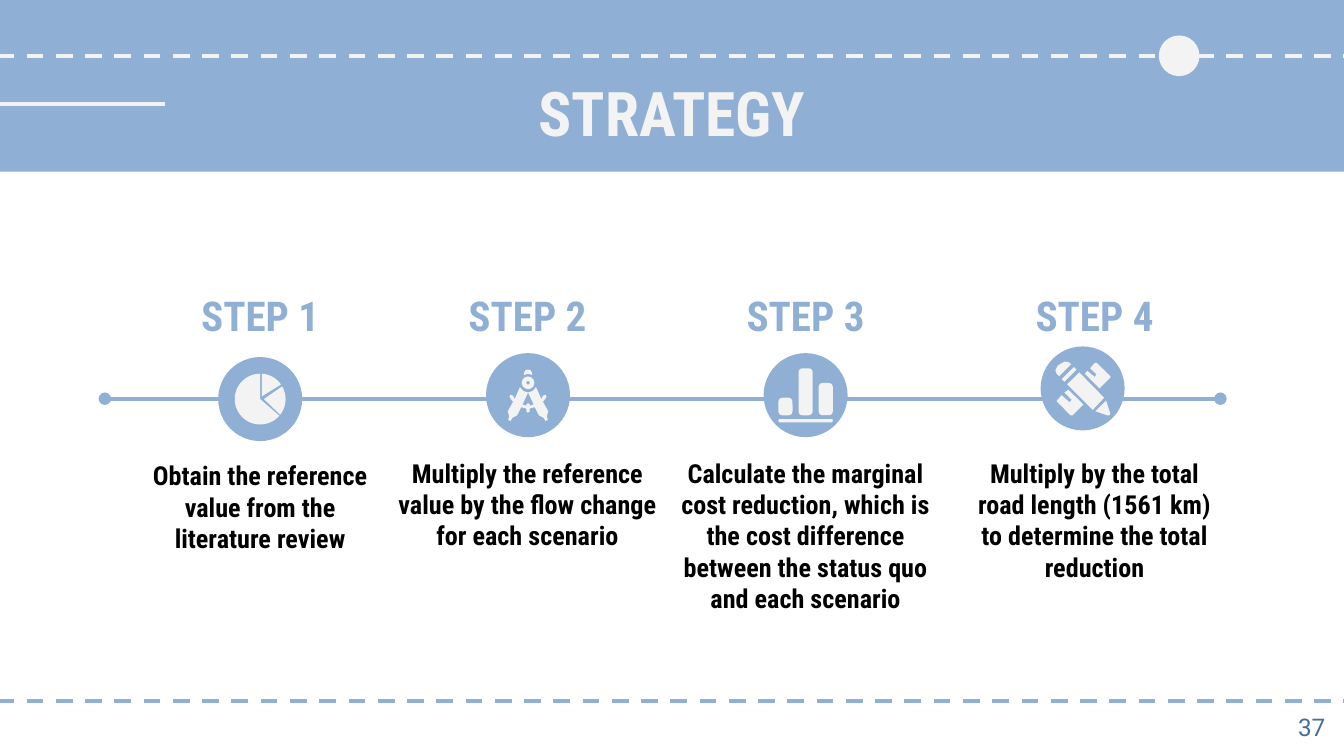
"""Build the strategy slide: a four-step timeline with icons."""
from dataclasses import dataclass
from math import cos, radians, sin
from typing import Callable

from lxml import etree
from pptx import Presentation
from pptx.dml.color import RGBColor
from pptx.enum.dml import MSO_LINE
from pptx.enum.shapes import MSO_CONNECTOR, MSO_SHAPE
from pptx.enum.text import MSO_ANCHOR, MSO_AUTO_SIZE, PP_ALIGN
from pptx.oxml.ns import qn
from pptx.util import Pt

RECT, OVAL = MSO_SHAPE.RECTANGLE, MSO_SHAPE.OVAL
ROUNDED, DONUT = MSO_SHAPE.ROUNDED_RECTANGLE, MSO_SHAPE.DONUT
STRAIGHT, DASH = MSO_CONNECTOR.STRAIGHT, MSO_LINE.DASH
CENTER, RIGHT = PP_ALIGN.CENTER, PP_ALIGN.RIGHT
TOP, MIDDLE = MSO_ANCHOR.TOP, MSO_ANCHOR.MIDDLE
NO_FIT = MSO_AUTO_SIZE.NONE

Points = list[tuple[float, float]]


@dataclass(frozen=True)
class Style:
    size: float
    color: RGBColor
    bold: bool = True
    font: str = "Roboto Condensed"


@dataclass(frozen=True)
class Theme:
    blue: RGBColor = RGBColor(0x8F, 0xB0, 0xD4)
    light: RGBColor = RGBColor(0xF3, 0xF3, 0xF3)
    title: Style = Style(33, light)
    step: Style = Style(22, blue)
    body: Style = Style(14, RGBColor(0, 0, 0))
    number: Style = Style(13, RGBColor(0x43, 0x6F, 0x9E), False, "Roboto")
    line: float = 2.25
    inset: float = 7.2


THEME = Theme()


@dataclass(frozen=True)
class Step:
    cx: float
    icon_x: float
    icon_y: float
    body_top: float
    body_width: float
    paragraphs: tuple[str, ...]
    icon: Callable


def paint(sp, color: RGBColor) -> None:
    """Give a shape a flat fill without line or shadow."""
    sp.shadow.inherit = False
    sp.fill.solid()
    sp.fill.fore_color.rgb = color
    sp.line.fill.background()


def add_preset(s, kind, x: float, y: float, w: float, h: float, color: RGBColor):
    """Draw a flat preset shape."""
    sp = s.shapes.add_shape(kind, Pt(x), Pt(y), Pt(w), Pt(h))
    paint(sp, color)
    return sp


def add_polygon(s, cx: float, cy: float, points: Points, color: RGBColor = THEME.light) -> None:
    """Draw a closed polygon from offsets around a centre."""
    corners = [(Pt(cx + dx), Pt(cy + dy)) for dx, dy in points]
    builder = s.shapes.build_freeform(*corners[0])
    builder.add_line_segments(corners[1:], close=True)
    paint(builder.convert_to_shape(), color)


def add_line(s, x1: float, x2: float, y: float, color: RGBColor, dash=None, ends: str = "") -> None:
    """Draw a horizontal line with optional dashes and end marks."""
    c = s.shapes.add_connector(STRAIGHT, Pt(x1), Pt(y), Pt(x2), Pt(y))
    c.line.color.rgb = color
    c.line.width = Pt(THEME.line)
    if dash:
        c.line.dash_style = dash
    if ends:
        for tag in ("a:headEnd", "a:tailEnd"):
            etree.SubElement(c.line._get_or_add_ln(), qn(tag), type=ends)
    etree.SubElement(c._element.spPr, qn("a:effectLst"))


def write(sp, paragraphs: tuple[str, ...], style: Style, align=CENTER, anchor=TOP) -> None:
    """Fill a text shape with evenly styled paragraphs."""
    tf = sp.text_frame
    tf.word_wrap, tf.auto_size, tf.vertical_anchor = True, NO_FIT, anchor
    tf.margin_left = tf.margin_right = tf.margin_top = tf.margin_bottom = Pt(THEME.inset)
    tf.text = "\n".join(paragraphs)
    for p in tf.paragraphs:
        p.alignment = align
        p.font.name, p.font.size = style.font, Pt(style.size)
        p.font.bold, p.font.color.rgb = style.bold, style.color


def add_text(s, x: float, y: float, w: float, h: float, paragraphs: tuple[str, ...],
             style: Style, align=CENTER, anchor=TOP) -> None:
    """Add a wrapped text box."""
    write(s.shapes.add_textbox(Pt(x), Pt(y), Pt(w), Pt(h)), paragraphs, style, align, anchor)


def mirror(half: Points) -> Points:
    """Complete a left half outline with its reflection."""
    return half + [(-x, y) for x, y in reversed(half) if x]


def draw_pie(s, cx: float, cy: float) -> None:
    """Draw the pie icon from three separate sectors."""
    for apex, start, end in (((0, 0), 41, 270), ((2, 0), -30, 38), ((1, -1.5), -86, -35)):
        angles = [radians(start + (end - start) * i / 40) for i in range(41)]
        add_polygon(s, cx, cy, [apex] + [(13.6 * cos(a), 13.6 * sin(a)) for a in angles])


def draw_compass(s, cx: float, cy: float) -> None:
    """Draw the drawing-compass icon."""
    legs = [(0, -1.4), (-2.5, -2.2), (-4.3, -4.3), (-7.2, 2.2), (-8, 0.3), (-9.4, -0.2),
            (-10, 0.9), (-8, 3.6), (-10.8, 8.6), (-10.1, 11.5), (-10.6, 13.2), (-9.4, 13.9),
            (-8.4, 12.2), (-5.8, 10.8), (-3.6, 6.5), (-0.9, 7.2), (-0.9, 8.9), (0, 9.4)]
    gap = [(0, -1.2), (-2.9, 5), (-0.9, 5.6), (-0.9, 4.8), (0, 4.3)]
    cap = [(0, -13.7), (-1.4, -13.3), (-2.2, -11.9), (-2.2, -10.8), (0, -11.4)]
    add_polygon(s, cx, cy, mirror(legs))
    add_polygon(s, cx, cy, mirror(gap), THEME.blue)
    add_polygon(s, cx, cy, mirror(cap))
    ring = add_preset(s, DONUT, cx - 3.4, cy - 10, 6.8, 6.8, THEME.light)
    ring.adjustments[0] = 0.36


def draw_bars(s, cx: float, cy: float) -> None:
    """Draw the bar-chart icon."""
    for i, top in enumerate((1.4, -14.4, -6.5)):
        bar = add_preset(s, ROUNDED, cx - 14.6 + 10.8 * i, cy + top, 7.6, 10.8 - top, THEME.light)
        bar.adjustments[0] = 0.28
    base = add_preset(s, ROUNDED, cx - 14.6, cy + 12.8, 29.2, 1.8, THEME.light)
    base.adjustments[0] = 0.5


def draw_pencil(s, cx: float, cy: float) -> None:
    """Draw the crossed pencil and ruler icon."""
    band = [(-4.7, -11.5), (-11.2, -5), (-9.7, -3.6), (-3.2, -10.1)]
    shaft = [(-1.8, -8.6), (-8.3, -2.2), (5.4, 11.5), (11.5, 5)]
    tip = [(12.6, 6.5), (6.8, 12.2), (13.3, 14.4), (14.5, 14.4), (14.8, 13.3)]
    cap = [(-6.1, -13), (-7.6, -14.1), (-9.7, -14.4), (-13.3, -12.2), (-14.6, -9.7),
           (-14, -7.9), (-12.6, -6.5)]
    ruler_top = [(6.5, -13.7), (4, -10.8), (7.4, -7.6), (6.5, -6.1), (2.5, -9.4), (1.1, -7.9),
                 (9, 0), (14.8, -5.8), (14.8, -6.5), (7.6, -13.7)]
    ruler_end = [(-7.6, 0.7), (-9.7, 2.2), (-5.8, 6.1), (-7, 7.4), (-11.2, 3.6), (-14, 6.8),
                 (-6.5, 14.4), (-5.4, 14.4), (0.4, 8.6)]
    for part in (band, shaft, tip, cap, ruler_top, ruler_end):
        add_polygon(s, cx, cy, part)


STEPS = (
    Step(139.4, 139.4, 213.8, 239, 133.2,
         ("Obtain the reference value from the literature review",), draw_pie),
    Step(282.6, 282.9, 211.7, 237.6, 153.4,
         ("Multiply the reference value by the flow change for each scenario",), draw_compass),
    Step(431.6, 431.6, 211.7, 237.6, 153.4,
         ("Calculate the marginal cost reduction, which is the cost difference "
          "between the status quo and each scenario",), draw_bars),
    Step(586.4, 580, 208.1, 237.6, 153.4,
         ("Multiply by the total road length (1561 km)",
          "to determine the total reduction"), draw_pencil),
)


def add_step(s, number: int, step: Step) -> None:
    """Draw one step with its heading, icon and description."""
    add_text(s, step.cx - 66.6, 148.3, 133.2, 37.4, (f"STEP {number}",), THEME.step)
    add_preset(s, OVAL, step.icon_x - 22.5, step.icon_y - 22.5, 45, 45, THEME.blue)
    step.icon(s, step.icon_x, step.icon_y)
    add_text(s, step.cx - step.body_width / 2, step.body_top, step.body_width, 37.4,
             step.paragraphs, THEME.body)


def main() -> None:
    """Build and save the slide."""
    prs = Presentation()
    prs.slide_width, prs.slide_height = Pt(720), Pt(405)
    s = prs.slides.add_slide(prs.slide_layouts[5])
    band = add_preset(s, RECT, -1.4, 0, 722.9, 92, THEME.blue)
    title = s.shapes.title
    band._element.addnext(title._element)
    title.left, title.top, title.width, title.height = Pt(56.2), Pt(33.1), Pt(607.7), Pt(45.4)
    write(title, ("STRATEGY",), THEME.title)
    add_line(s, -1.4, 721.4, 30.2, THEME.light, DASH)
    add_line(s, -2.2, 88.6, 55.6, THEME.light)
    add_preset(s, OVAL, 620.8, 19, 21.8, 21.8, THEME.light)
    add_line(s, -1.4, 721.4, 375.7, THEME.blue, DASH)
    add_text(s, 673.9, 373.7, 43.2, 31, ("37",), THEME.number, RIGHT, MIDDLE)
    add_line(s, 56.2, 653.8, 213.6, THEME.blue, ends="oval")
    for number, step in enumerate(STEPS, 1):
        add_step(s, number, step)
    prs.save("out.pptx")


if __name__ == "__main__":
    main()
